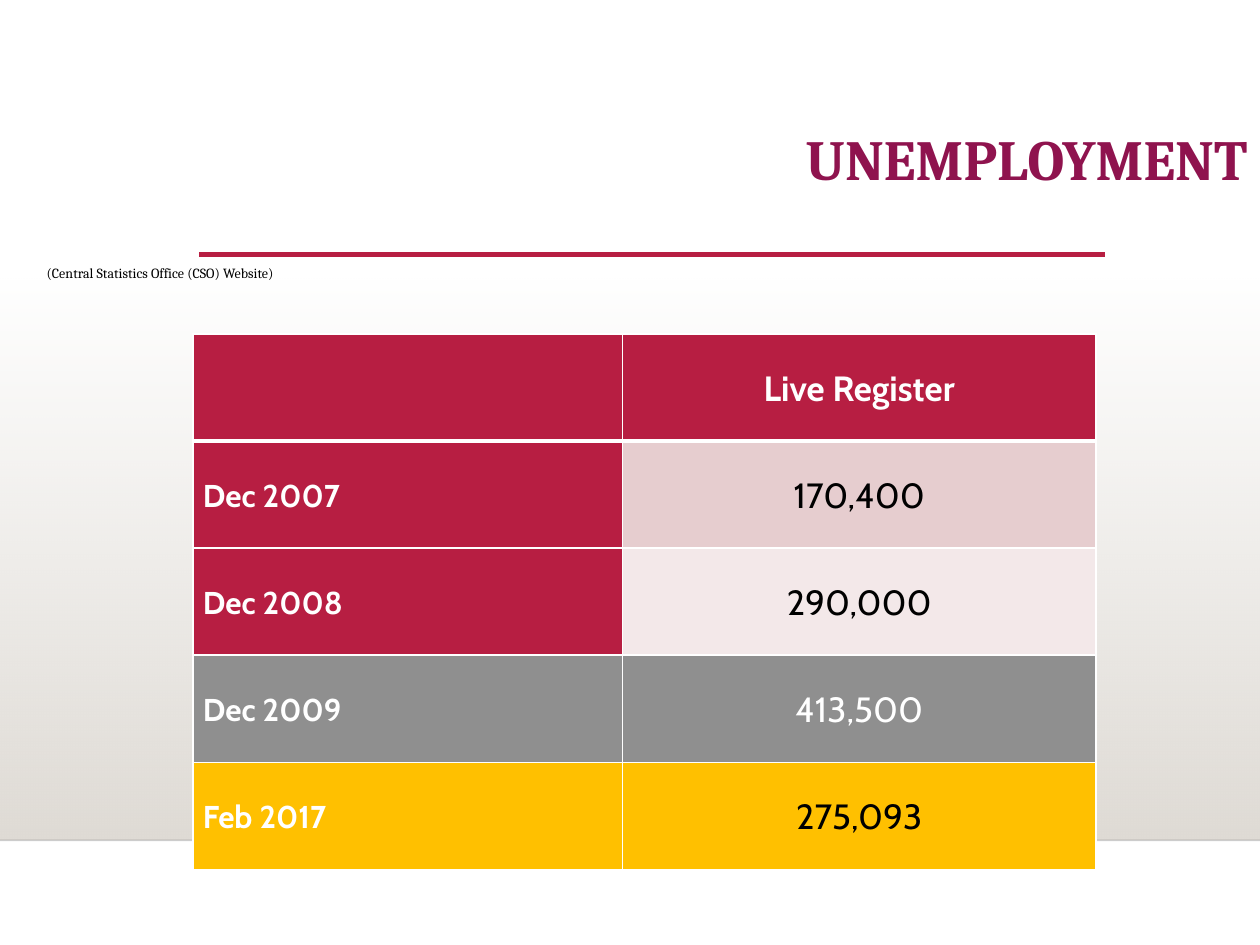
from lxml import etree
from pptx import Presentation
from pptx.dml.color import RGBColor
from pptx.enum import shapes, text
from pptx.oxml import parse_xml
from pptx.oxml.ns import nsdecls, qn
from pptx.util import Inches, Pt

CRIMSON, GREY, AMBER = "B71E42", "8F8F8F", "FFC000"
WHITE, BLACK = "FFFFFF", "000000"


def rgb(value):
    return RGBColor.from_string(value)


def set_font(para, name, size, color, bold=False):
    para.font.name = name
    para.font.size = Pt(size)
    para.font.bold = bold
    para.font.color.rgb = rgb(color)


deck = Presentation()
deck.slide_width, deck.slide_height = Inches(10), Inches(7.5)
page = deck.slides.add_slide(deck.slide_layouts[1])
page.background.fill.solid()
page.background.fill.fore_color.rgb = rgb(WHITE)

# Floor: a gradient fading in downwards, kept behind the text
floor = page.shapes.add_shape(
    shapes.MSO_SHAPE.RECTANGLE, 0, Inches(2.2), Inches(10), Inches(4.46))
floor.shadow.inherit = False
floor.line.fill.background()
floor._element.spPr.find(qn("a:prstGeom")).addnext(parse_xml(
    f'<a:gradFill {nsdecls("a")} rotWithShape="1"><a:gsLst>'
    '<a:gs pos="0"><a:srgbClr val="DFDBD5"><a:alpha val="0"/></a:srgbClr></a:gs>'
    '<a:gs pos="100000"><a:srgbClr val="DFDBD5"/></a:gs>'
    '</a:gsLst><a:lin ang="5400000" scaled="0"/></a:gradFill>'))
page.shapes._spTree.insert(2, floor._element)

# Floor edge and title rule
for left, right, y, color, width, alpha in (
        (0, 10, 6.67, "000001", 1, 20),
        (1.58, 8.77, 2.02, CRIMSON, 2.5, 100)):
    rule = page.shapes.add_connector(
        shapes.MSO_CONNECTOR.STRAIGHT, Inches(left), Inches(y), Inches(right), Inches(y))
    rule.line.color.rgb = rgb(color)
    rule.line.width = Pt(width)
    if alpha < 100:
        tint = rule.line._ln.find(".//" + qn("a:srgbClr"))
        etree.SubElement(tint, qn("a:alpha")).set("val", str(alpha * 1000))
    etree.SubElement(rule._element.spPr, qn("a:effectLst"))

title = page.shapes.title
title.left, title.top, title.width, title.height = 0, 0, Inches(10), Inches(1.55)
frame = title.text_frame
frame.text = "UNEMPLOYMENT"
frame.word_wrap = True
frame.auto_size = text.MSO_AUTO_SIZE.NONE
frame.vertical_anchor = text.MSO_ANCHOR.BOTTOM
frame.margin_bottom = Inches(0.02)
para = frame.paragraphs[0]
para.alignment = text.PP_ALIGN.RIGHT
para.line_spacing = 0.9
set_font(para, "Cambria", 32.4, "8F134E", True)

body = page.placeholders[1]
body.left, body.top, body.width, body.height = map(Inches, (0.27, 2.02, 8.43, 4.88))
frame = body.text_frame
frame.text = "(Central Statistics Office (CSO) Website)"
frame.auto_size = text.MSO_AUTO_SIZE.NONE
para = frame.paragraphs[0]
para.line_spacing = 1.2
para.space_before = Pt(0)
settings = para._p.get_or_add_pPr()
settings.set("marL", "0")
settings.set("indent", "0")
etree.SubElement(settings, qn("a:buNone"))
set_font(para, "Cambria", 8, BLACK)

# Each row: label, value, label fill, value fill, value colour
rows = [
    ("", "Live Register", CRIMSON, CRIMSON, WHITE),
    ("Dec 2007", "170,400", CRIMSON, "E6CDCF", BLACK),
    ("Dec 2008", "290,000", CRIMSON, "F3E8E9", BLACK),
    ("Dec 2009", "413,500", GREY, GREY, WHITE),
    ("Feb 2017", "275,093", AMBER, AMBER, BLACK),
]
table = page.shapes.add_table(
    len(rows), 2, Inches(1.53), Inches(2.65), Inches(7.17), Inches(4.25)).table
table.columns[0].width, table.columns[1].width = Inches(3.41), Inches(3.76)
for r, (label, value, label_fill, value_fill, value_color) in enumerate(rows):
    table.rows[r].height = Inches(0.85)
    for c, (words, fill, color) in enumerate(
            ((label, label_fill, WHITE), (value, value_fill, value_color))):
        cell = table.cell(r, c)
        cell.text = words
        cell.vertical_anchor = text.MSO_ANCHOR.MIDDLE
        cell.margin_left = cell.margin_right = Inches(0.08)
        cell.margin_top = cell.margin_bottom = 0
        para = cell.text_frame.paragraphs[0]
        para.alignment = text.PP_ALIGN.CENTER if c else text.PP_ALIGN.LEFT
        para.line_spacing = 1.07
        set_font(para, "Cabin", 20 if c else 18, color, r == 0 or c == 0)
        for side in "LRTB":
            heavy = (r, side) in ((0, "B"), (1, "T"))
            cell._tc.get_or_add_tcPr().append(parse_xml(
                f'<a:ln{side} {nsdecls("a")} w="{Pt(3 if heavy else 1)}">'
                f'<a:solidFill><a:srgbClr val="{WHITE}"/></a:solidFill></a:ln{side}>'))
        cell.fill.solid()
        cell.fill.fore_color.rgb = rgb(fill)

deck.save("out.pptx")
